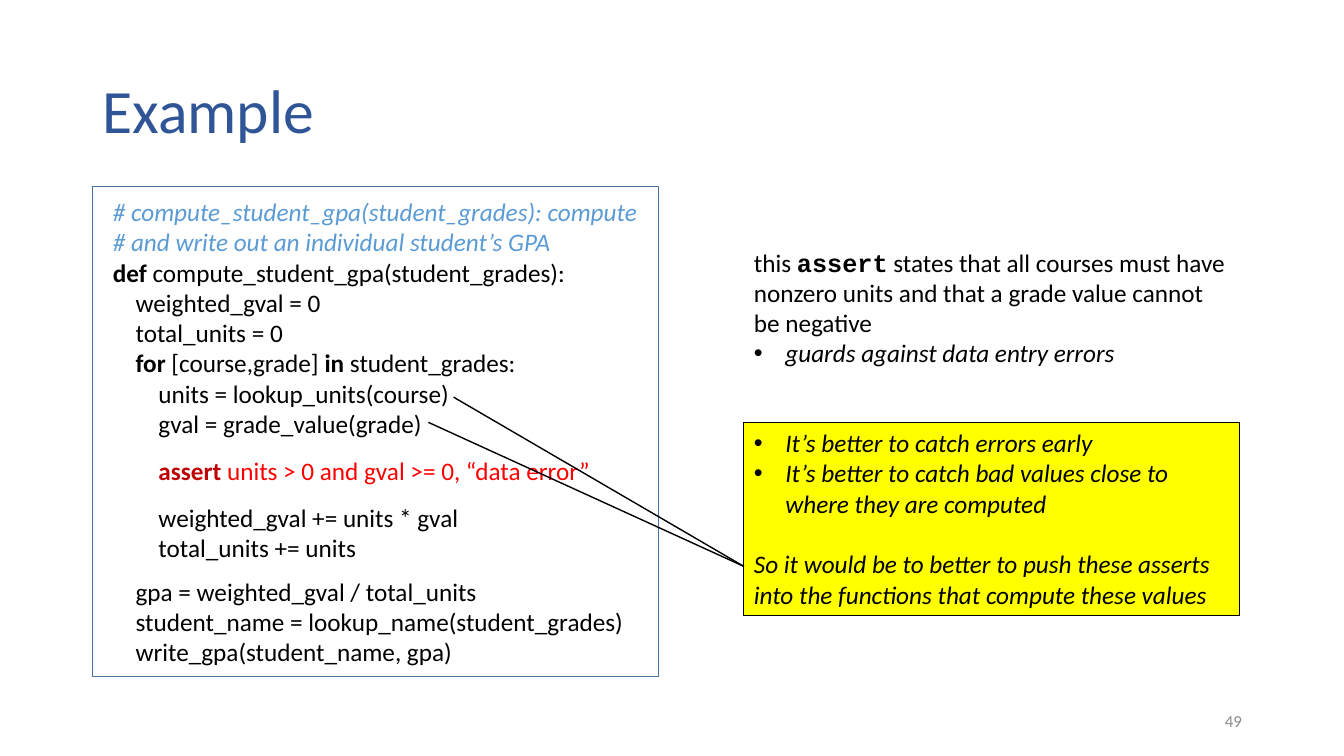
from dataclasses import dataclass
from typing import Any

from lxml import etree
from pptx import Presentation
from pptx.dml.color import RGBColor
from pptx.enum.shapes import MSO_CONNECTOR, MSO_SHAPE
from pptx.enum.text import MSO_ANCHOR, PP_ALIGN
from pptx.oxml.ns import qn
from pptx.util import Pt

RECTANGLE, STRAIGHT = MSO_SHAPE.RECTANGLE, MSO_CONNECTOR.STRAIGHT
TOP, MIDDLE = MSO_ANCHOR.TOP, MSO_ANCHOR.MIDDLE
LEFT, RIGHT = PP_ALIGN.LEFT, PP_ALIGN.RIGHT

BLACK, RED = "000000", "FF0000"
CODE_INDENT = 16.3  # one level of code
BULLET_INDENT = 22.5


@dataclass(frozen=True)
class Run:
    text: str
    color: str = BLACK
    bold: bool = False
    italic: bool = False
    font: str = "Calibri"
    size: float = 18


@dataclass(frozen=True)
class Line:
    runs: tuple[Run, ...]
    level: int = 0
    space_before: float = 0
    bullet: bool = False
    align: PP_ALIGN = LEFT
    line_spacing: float = 1.0


@dataclass(frozen=True)
class Box:
    left: float
    top: float
    width: float
    height: float
    lines: tuple[Line, ...]
    fill: str | None = None
    border: str | None = None
    border_width: float = 0
    anchor: MSO_ANCHOR = TOP
    wrap: bool = True
    margin_left: float = 7.2
    margin_top: float = 3.6


def rgb(color: str) -> RGBColor:
    return RGBColor.from_string(color)


def apply_format(target: Any, values: dict[str, Any]) -> None:
    for name, value in values.items():
        setattr(target, name, value)


def code(text: str, level: int = 0, space_before: float = 0) -> Line:
    return Line((Run(text),), level, space_before)


def italic(text: str, color: str = BLACK, **layout: Any) -> Line:
    return Line((Run(text, color, italic=True),), **layout)


def write_line(paragraph: Any, line: Line) -> None:
    apply_format(paragraph, {
        "alignment": line.align,
        "line_spacing": line.line_spacing,
        "space_before": Pt(line.space_before),
    })
    properties = paragraph._p.get_or_add_pPr()
    if line.bullet:
        properties.set("marL", str(Pt(BULLET_INDENT)))
        properties.set("indent", str(-Pt(BULLET_INDENT)))
        bullet_font = etree.SubElement(properties, qn("a:buFont"))
        bullet_font.set("typeface", "Arial")
        etree.SubElement(properties, qn("a:buChar")).set("char", "•")
    elif line.level:
        properties.set("marL", str(Pt(line.level * CODE_INDENT)))
    for part in line.runs:
        run = paragraph.add_run()
        run.text = part.text
        apply_format(run.font, {
            "name": part.font, "size": Pt(part.size),
            "bold": part.bold, "italic": part.italic,
        })
        run.font.color.rgb = rgb(part.color)


def add_box(slide: Any, box: Box) -> None:
    place = [Pt(length) for length in (box.left, box.top, box.width, box.height)]
    if box.border:
        shape = slide.shapes.add_shape(RECTANGLE, *place)
        shape.shadow.inherit = False
        shape.line.color.rgb = rgb(box.border)
        shape.line.width = Pt(box.border_width)
        if box.fill:
            shape.fill.solid()
            shape.fill.fore_color.rgb = rgb(box.fill)
        else:
            shape.fill.background()
    else:
        shape = slide.shapes.add_textbox(*place)
    frame = shape.text_frame
    apply_format(frame, {
        "word_wrap": box.wrap, "vertical_anchor": box.anchor,
        "margin_left": Pt(box.margin_left), "margin_right": Pt(7.2),
        "margin_top": Pt(box.margin_top), "margin_bottom": Pt(3.6),
    })
    for index, line in enumerate(box.lines):
        paragraph = frame.add_paragraph() if index else frame.paragraphs[0]
        write_line(paragraph, line)


def add_pointer(slide: Any, start: tuple[float, float], end: tuple[float, float]) -> None:
    connector = slide.shapes.add_connector(
        STRAIGHT, *(Pt(length) for length in start + end))
    connector.line.color.rgb = rgb(BLACK)
    connector.line.width = Pt(1)
    etree.SubElement(connector._element.spPr, qn("a:effectLst"))


COMMENT_BLUE = "5B9BD5"
CODE_LINES = (
    italic("# compute_student_gpa(student_grades): compute", COMMENT_BLUE),
    italic("# and write out an individual student’s GPA", COMMENT_BLUE),
    Line((Run("def ", bold=True), Run("compute_student_gpa(student_grades):"))),
    code("weighted_gval = 0", 1),
    code("total_units = 0", 1),
    Line((Run("for", bold=True), Run(" [course,grade] "),
          Run("in ", bold=True), Run("student_grades:")), 1),
    code("units = lookup_units(course)", 2),
    code("gval = grade_value(grade)", 2),
    Line((Run("assert", "C00000", bold=True),
          Run(" units > 0 and gval >= 0, “data error”", RED)), 2, 12),
    code("weighted_gval += units * gval", 2, 12),
    code("total_units += units", 2),
    code("gpa = weighted_gval / total_units", 1, 9.7),
    code("student_name = lookup_name(student_grades)", 1),
    code("write_gpa(student_name, gpa)", 1),
)
NOTE_LINES = (
    Line((Run("this "), Run("assert", bold=True, font="Courier New"),
          Run(" states that all courses must have"))),
    Line((Run("nonzero units and that a grade value cannot"),)),
    Line((Run("be negative"),)),
    italic("guards against data entry errors", bullet=True),
)
ADVICE_LINES = (
    italic("It’s better to catch errors early", bullet=True),
    italic("It’s better to catch bad values close to where they are computed",
           bullet=True),
    italic("So it would be to better to push these asserts into the functions "
           "that compute these values", space_before=21.8),
)
TITLE = Line((Run("Example", "2F5597", size=44),), line_spacing=0.9)
PAGE_NUMBER = Line((Run("49", "8C8C8C", size=12),), align=RIGHT)

BOXES = (
    Box(66.2, 133.2, 403.9, 349.9, CODE_LINES, border="43739E",
        border_width=0.25, margin_left=14.4, margin_top=7.2),
    Box(66.2, 28.8, 828, 104.4, (TITLE,), anchor=MIDDLE),
    Box(531.4, 172.8, 354.2, 94.3, NOTE_LINES, wrap=False),
    Box(678.2, 500.4, 216, 28.8, (PAGE_NUMBER,), anchor=MIDDLE),
    Box(531.4, 301.7, 354.2, 138.2, ADVICE_LINES, fill="FFFF00",
        border=BLACK, border_width=0.75),
)
# Ends of the two code lines, and the edge of the advice box
POINTER_STARTS = ((324, 283.7), (306, 301.7))
POINTER_END = (531.4, 404.6)


def main() -> None:
    presentation = Presentation()
    apply_format(presentation, {"slide_width": Pt(960), "slide_height": Pt(540)})
    slide = presentation.slides.add_slide(presentation.slide_layouts[6])
    for box in BOXES:
        add_box(slide, box)
    for start in POINTER_STARTS:
        add_pointer(slide, start, POINTER_END)
    presentation.save("out.pptx")


if __name__ == "__main__":
    main()
